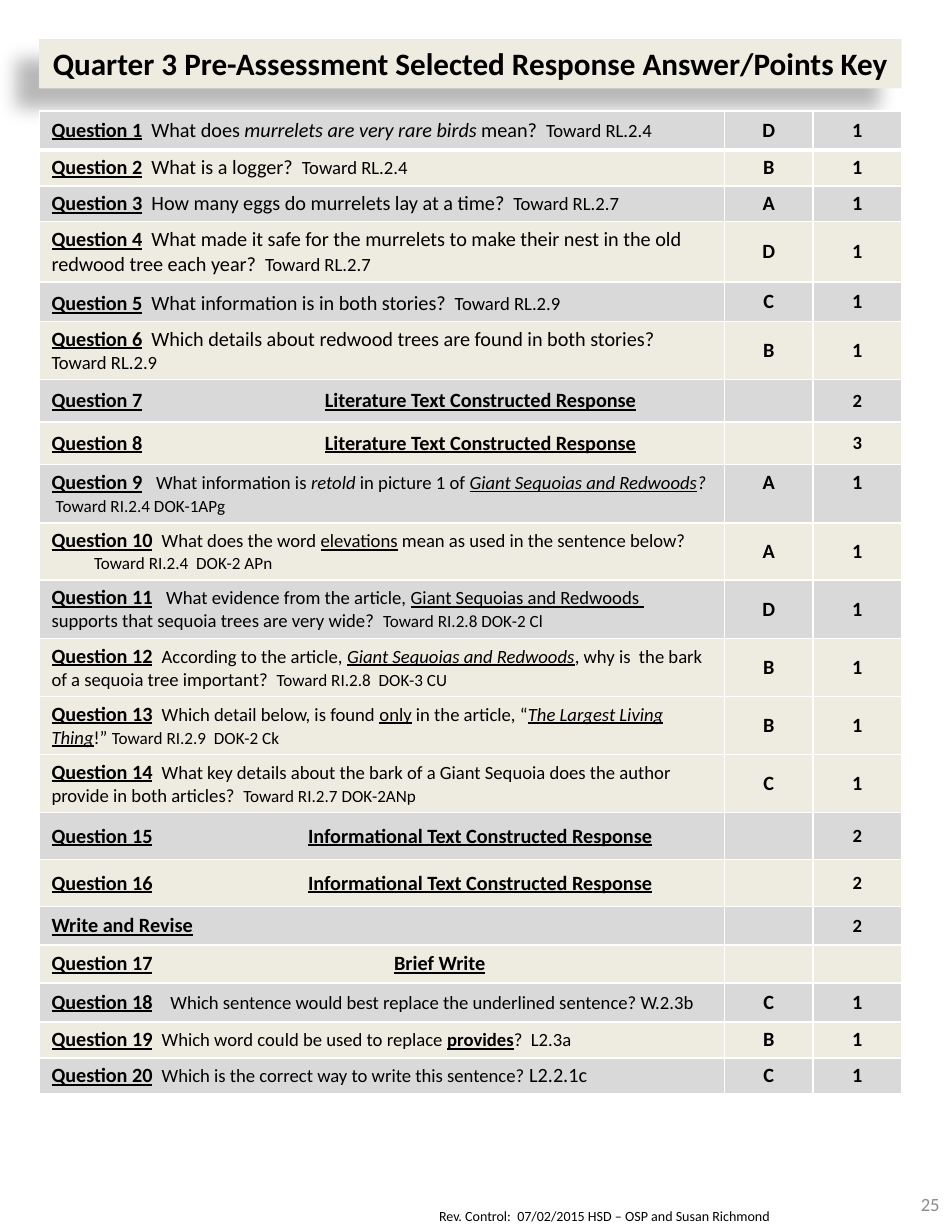
from lxml import etree
from pptx import Presentation
from pptx.dml.color import RGBColor
from pptx.enum.shapes import MSO_SHAPE
from pptx.enum.text import MSO_ANCHOR, PP_ALIGN
from pptx.oxml.ns import qn
from pptx.util import Inches, Pt

LEFT, CENTER, RIGHT = PP_ALIGN.LEFT, PP_ALIGN.CENTER, PP_ALIGN.RIGHT
TOP, MIDDLE = MSO_ANCHOR.TOP, MSO_ANCHOR.MIDDLE
RECTANGLE = MSO_SHAPE.RECTANGLE

FONT = "Calibri"
COLORS = {"text": "000000", "number": "8C8C8C", "cream": "EEECE1",
          "gray": "D9D9D9", "border": "FFFFFF", "shadow": "000000"}
COLUMN_WIDTHS = (6.12, 0.79, 0.79)
LITERATURE = [("\tLiterature Text Constructed Response", 13, "bu")]
INFORMATIONAL = [("\tInformational Text Constructed Response", 13, "bu")]

# Row height, label, runs (text, size, style letters b/i/u), answer, points
ROWS = [
    (0.35, "Question 1", [("  What does ", 13, ""), ("murrelets are very rare birds ", 13, "i"),
                          ("mean?  ", 13, ""), ("Toward RL.2.4", 12, "")], "D", "1"),
    (0.32, "Question 2", [("  What is a logger?  ", 13, ""), ("Toward RL.2.4", 12, "")], "B", "1"),
    (0.32, "Question 3", [("  How many eggs do murrelets lay at a time?  ", 13, ""),
                          ("Toward RL.2.7", 12, "")], "A", "1"),
    (0.54, "Question 4", [("  What made it safe for the murrelets to make their nest in the old "
                           "redwood tree each year?  ", 13, ""),
                          ("Toward RL.2.7", 12, "")], "D", "1"),
    (0.35, "Question 5", [("  What information is in both stories?  ", 13, ""),
                          ("Toward RL.2.9", 12, "")], "C", "1"),
    (0.52, "Question 6", [("  Which details about redwood trees are found in both stories?", 13, ""),
                          ("\nToward RL.2.9", 12, "")], "B", "1"),
    (0.38, "Question 7", LITERATURE, "", "2"),
    (0.38, "Question 8", LITERATURE, "", "3"),
    (0.52, "Question 9", [("   ", 13, ""), ("What information is ", 12, ""), ("retold", 12, "i"),
                          (" in picture 1 of ", 12, ""),
                          ("Giant Sequoias and Redwoods", 12, "iu"), ("?   ", 12, "i"),
                          ("Toward RI.2.4 DOK-1APg", 11, "")], "A", "1"),
    (0.51, "Question 10", [("  ", 13, ""), ("What does the word ", 12, ""), ("elevations", 12, "u"),
                           (" mean as used in the sentence below? ", 12, ""),
                           ("Toward RI.2.4  DOK-2 APn", 11, "")], "A", "1"),
    (0.52, "Question 11", [("   ", 13, ""), ("What evidence from the article, ", 12, ""),
                           ("Giant Sequoias and Redwoods  ", 12, "u"),
                           ("supports that sequoia trees are very wide?  ", 12, ""),
                           ("Toward RI.2.8 DOK-2 Cl", 11, "")], "D", "1"),
    (0.52, "Question 12", [("  ", 13, ""), ("According to the article, ", 12, ""),
                           ("Giant Sequoias and Redwoods", 12, "iu"),
                           (", why is  the bark of a sequoia tree important?  ", 12, ""),
                           ("Toward RI.2.8  DOK-3 CU", 11, "")], "B", "1"),
    (0.52, "Question 13", [("  ", 13, ""), ("Which detail below, is found ", 12, ""),
                           ("only", 12, "u"), (" in the article, “", 12, ""),
                           ("The Largest Living Thing", 12, "iu"), ("!” ", 12, ""),
                           ("Toward RI.2.9  DOK-2 Ck", 11, "")], "B", "1"),
    (0.52, "Question 14", [("  ", 13, ""),
                           ("What key details about the bark of a Giant Sequoia does the author "
                            "provide in both articles?  ", 12, ""),
                           ("Toward RI.2.7 DOK-2ANp", 11, "")], "C", "1"),
    (0.42, "Question 15", INFORMATIONAL, "", "2"),
    (0.42, "Question 16", INFORMATIONAL, "", "2"),
    (0.34, "Write and Revise", [], "", "2"),
    (0.34, "Question 17", [("\tBrief Write", 13, "bu")], "", ""),
    (0.35, "Question 18", [("   ", 13, "b"),
                           (" Which sentence would best replace the underlined sentence? W.2.3b",
                            12, "")], "C", "1"),
    (0.32, "Question 19", [("  ", 13, ""), ("Which word could be used to replace ", 12, ""),
                           ("provides", 12, "bu"), ("?  L2.3a", 12, "")], "B", "1"),
    (0.32, "Question 20", [("  ", 13, ""), ("Which is the correct way to write this sentence? ", 12, ""),
                           ("L2.2.1c", 13, "")], "C", "1"),
]
# Where the centred headings of constructed responses start
TAB_STOPS = {"Question 7": 2.44, "Question 8": 2.44, "Question 15": 2.29,
             "Question 16": 2.29, "Question 17": 3.06}


def add_color(parent, color):
    fill = etree.SubElement(parent, qn("a:solidFill"))
    return etree.SubElement(fill, qn("a:srgbClr"), val=COLORS[color])


def write_runs(text_frame, runs, align=LEFT, color="text"):
    paragraph = text_frame.paragraphs[0]
    paragraph.alignment = align
    for text, size, style in runs:
        if text.startswith("\n"):
            paragraph = text_frame.add_paragraph()
        run = paragraph.add_run()
        run.text = text.lstrip("\n")
        font = run.font
        font.name, font.size = FONT, Pt(size)
        font.bold, font.italic, font.underline = (letter in style for letter in "biu")
        font.color.rgb = RGBColor.from_string(COLORS[color])


def set_insets(target, vertical):
    target.margin_left = target.margin_right = Inches(0.11)
    target.margin_top = target.margin_bottom = Inches(vertical)


def add_text(slide, box, runs, align=LEFT, color="text", anchor=TOP, inset=0.05):
    shape = slide.shapes.add_textbox(*map(Inches, box))
    frame = shape.text_frame
    frame.word_wrap, frame.vertical_anchor = True, anchor
    set_insets(frame, inset)
    write_runs(frame, runs, align, color)


def add_title(slide):
    shape = slide.shapes.add_shape(RECTANGLE, *map(Inches, (0.35, 0.35, 7.7, 0.44)))
    shape.fill.solid()
    shape.fill.fore_color.rgb = RGBColor.from_string(COLORS["cream"])
    shape.line.fill.background()
    # Soft shadow to the lower left
    effects = etree.SubElement(shape.element.spPr, qn("a:effectLst"))
    shadow = etree.SubElement(effects, qn("a:outerShdw"), blurRad=str(Pt(11.8)),
                              dist=str(Pt(19.7)), dir=str(141 * 60000),
                              algn="ctr", rotWithShape="0")
    tint = etree.SubElement(shadow, qn("a:srgbClr"), val=COLORS["shadow"])
    etree.SubElement(tint, qn("a:alpha"), val="28000")
    frame = shape.text_frame
    frame.word_wrap, frame.vertical_anchor = True, TOP
    set_insets(frame, 0.05)
    write_runs(frame, [("Quarter 3 Pre-Assessment Selected Response Answer/Points Key", 20, "b")],
               CENTER)


def set_borders(cell, top, bottom):
    properties = cell._tc.get_or_add_tcPr()
    widths = {"a:lnL": 1, "a:lnR": 1, "a:lnT": top, "a:lnB": bottom}
    for position, (tag, width) in enumerate(widths.items()):
        line = etree.Element(qn(tag), w=str(Pt(width)))
        add_color(line, "border")
        properties.insert(position, line)


def fill_cell(cell, runs, align, color, anchor):
    cell.fill.solid()
    cell.fill.fore_color.rgb = RGBColor.from_string(COLORS[color])
    cell.vertical_anchor = anchor
    set_insets(cell, 0.05)
    write_runs(cell.text_frame, runs, align)
    if not runs:  # keeps an empty cell from stretching its row
        etree.SubElement(cell.text_frame.paragraphs[0]._p, qn("a:endParaRPr"), sz="1200")


def format_question(paragraph, label):
    properties = paragraph._p.get_or_add_pPr()
    if label == "Question 5":
        paragraph.line_spacing = 1.15
    if label == "Question 10":
        properties.set("marL", str(Inches(0.38)))
        properties.set("indent", str(Inches(-0.38)))
    if label in TAB_STOPS:
        tabs = etree.SubElement(properties, qn("a:tabLst"))
        etree.SubElement(tabs, qn("a:tab"), pos=str(Inches(TAB_STOPS[label])), algn="l")


def add_answer_table(slide):
    height = sum(row[0] for row in ROWS)
    table = slide.shapes.add_table(len(ROWS), len(COLUMN_WIDTHS), Inches(0.35), Inches(0.99),
                                   Inches(sum(COLUMN_WIDTHS)), Inches(height)).table
    table.first_row = table.horz_banding = False
    for column, width in zip(table.columns, COLUMN_WIDTHS):
        column.width = Inches(width)
    for index, (height, label, body, answer, points) in enumerate(ROWS):
        table.rows[index].height = Inches(height)
        color = "cream" if index % 2 or label == "Question 13" else "gray"
        anchor = TOP if label == "Question 9" else MIDDLE
        size = 13 if answer else 12
        contents = [[(label, 13, "bu")] + body]
        contents += [[(text, size, "b")] if text else [] for text in (answer, points)]
        for column, runs in enumerate(contents):
            cell = table.cell(index, column)
            fill_cell(cell, runs, CENTER if column else LEFT, color, anchor)
            set_borders(cell, 3 if index == 1 else 1, 3 if index == 0 else 1)
        format_question(table.cell(index, 0).text_frame.paragraphs[0], label)


def main():
    presentation = Presentation()
    presentation.slide_width, presentation.slide_height = Inches(8.5), Inches(11)
    slide = presentation.slides.add_slide(presentation.slide_layouts[6])
    # Footer and page number
    add_text(slide, (3.81, 10.73, 4.25, 0.26),
             [("Rev. Control:  07/02/2015 HSD – OSP and Susan Richmond", 9, "")])
    add_text(slide, (7.83, 10.5, 0.67, 0.5), [("25", 12, "")], RIGHT, "number", MIDDLE, 0.06)
    # Heading and answer key
    add_title(slide)
    add_answer_table(slide)
    presentation.save("out.pptx")


if __name__ == "__main__":
    main()
